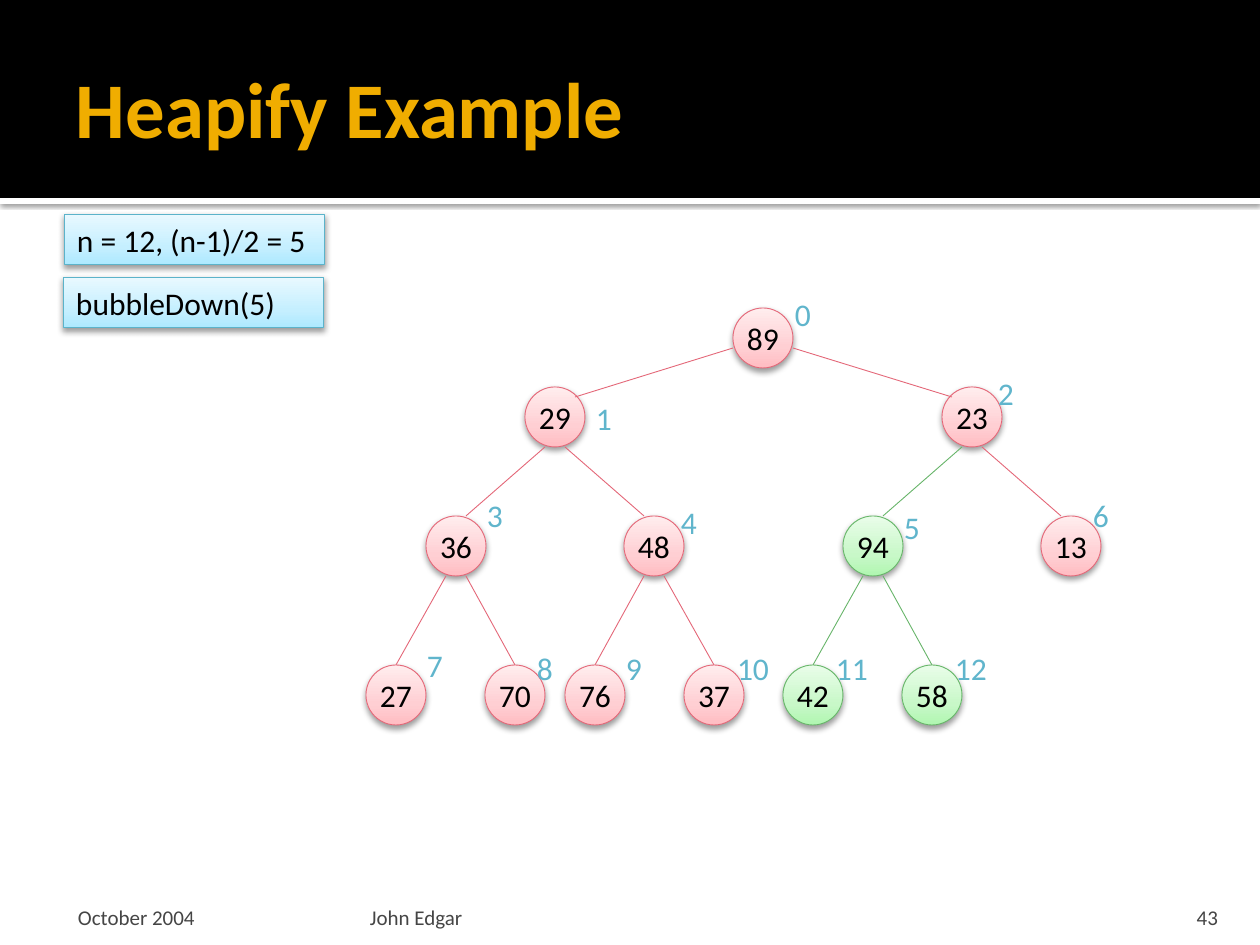
from dataclasses import dataclass
from typing import Optional

from lxml.etree import SubElement
from pptx import Presentation
from pptx.dml.color import RGBColor
from pptx.enum.shapes import MSO_CONNECTOR, MSO_SHAPE
from pptx.enum.text import MSO_ANCHOR as Anchor, PP_ALIGN as Align
from pptx.oxml.ns import qn
from pptx.util import Emu, Pt

FONT = "Calibri"
PX_PER_INCH = 126
BLACK = RGBColor(0x00, 0x00, 0x00)
WHITE = RGBColor(0xFF, 0xFF, 0xFF)
GOLD = RGBColor(0xF0, 0xAD, 0x00)
GREY = RGBColor(0x45, 0x45, 0x45)
TEAL = RGBColor(0x60, 0xB5, 0xCC)

RADIUS = 30
LABEL_H = 50
LEVEL_Y = (338, 417, 546, 695)


@dataclass(frozen=True)
class Style:
    line: RGBColor
    dark: RGBColor
    mid: RGBColor
    light: RGBColor


@dataclass(frozen=True)
class Shadow:
    alpha: int
    blur: float
    dist: float


@dataclass(frozen=True)
class Node:
    value: int
    x: int
    label_dx: int
    label_dy: int
    label_w: int = 60
    active: bool = False


@dataclass(frozen=True)
class Joint:
    """Offsets of an edge's ends from the parent's and child's centres."""
    parent_dx: int
    parent_dy: int
    child_dx: int
    child_dy: int


@dataclass(frozen=True)
class Caption:
    text: str
    box: tuple[int, int, int, int]
    size: int
    color: RGBColor
    bold: bool = False
    align: Align = Align.LEFT
    anchor: Anchor = Anchor.BOTTOM
    insets: tuple[int, int, int, int] = (13, 6, 13, 0)


PINK = Style(RGBColor(0xE4, 0x67, 0x78), RGBColor(0xFF, 0xBC, 0xC2),
             RGBColor(0xFF, 0xCF, 0xD3), RGBColor(0xFF, 0xED, 0xEE))
GREEN = Style(RGBColor(0x67, 0xB5, 0x69), RGBColor(0xB0, 0xF6, 0xB1),
              RGBColor(0xC8, 0xF8, 0xC8), RGBColor(0xE9, 0xFD, 0xE9))
BLUE = Style(RGBColor(0x5B, 0xB3, 0xCA), RGBColor(0xAD, 0xE9, 0xFF),
             RGBColor(0xC5, 0xEF, 0xFF), RGBColor(0xE9, 0xF9, 0xFF))
SOFT = Shadow(38, 3.5, 2)
BAND = Shadow(60, 2.5, 0.8)

# Heap in array order: the children of i are 2i + 1 and 2i + 2
HEAP = (
    Node(89, 763, 40, -24, 40),
    Node(29, 555, 49, 1), Node(23, 972, 34, -24, 50),
    Node(36, 456, 39, -31), Node(48, 654, 35, -24, 50),
    Node(94, 873, 39, -19, active=True), Node(13, 1071, 30, -31),
    Node(27, 396, 39, -30), Node(70, 515, 30, -27),
    Node(76, 595, 39, -27), Node(37, 714, 39, -27),
    Node(42, 813, 39, -27, active=True), Node(58, 932, 39, -27, active=True),
)
JOINTS = {1: Joint(30, 10, 20, -20), 2: Joint(10, 30, 10, -30), 3: Joint(10, 30, 0, -30)}

CAPTIONS = (
    Caption("Heapify Example", (63, 21, 1134, 173), 45, GOLD, True,
            anchor=Anchor.MIDDLE, insets=(13, 6, 6, 6)),
    Caption("October 2004", (63, 892, 294, 38), 12, GREY, insets=(15, 6, 6, 0)),
    Caption("John Edgar", (364, 892, 759, 38), 12, GREY, insets=(6, 6, 6, 0)),
    Caption("43", (1130, 892, 101, 38), 12, GREY, align=Align.RIGHT),
)
STEPS = (("n = 12, (n-1)/2 = 5", 64, 214), ("bubbleDown(5)", 63, 277))


def px(n: int) -> Emu:
    return Emu(round(n * 914400 / PX_PER_INCH))


def depth(i: int) -> int:
    return (i + 1).bit_length() - 1


def write(s, text: str, size: int, color: RGBColor, bold: bool = False,
          align: Align = Align.LEFT, anchor: Anchor = Anchor.MIDDLE,
          insets: tuple[int, int, int, int] = (13, 6, 13, 6)) -> None:
    tf = s.text_frame
    tf.word_wrap = True
    tf.vertical_anchor = anchor
    tf.margin_left, tf.margin_top, tf.margin_right, tf.margin_bottom = map(px, insets)
    p = tf.paragraphs[0]
    p.alignment = align
    r = p.add_run()
    r.text = text
    r.font.name, r.font.size, r.font.bold = FONT, Pt(size), bold
    r.font.color.rgb = color


def add_color(parent, color: RGBColor):
    return SubElement(parent, qn("a:srgbClr"), val=str(color))


def set_shadow(s, shadow: Shadow) -> None:
    effects = s._element.spPr.find(qn("a:effectLst"))
    outer = SubElement(effects, qn("a:outerShdw"), blurRad=str(Pt(shadow.blur)),
                       dist=str(Pt(shadow.dist)), dir="5400000", rotWithShape="0")
    SubElement(add_color(outer, BLACK), qn("a:alpha"), val=str(shadow.alpha * 1000))


def add_block(slide, kind: MSO_SHAPE, box: tuple[int, int, int, int],
              fill: RGBColor | Style, shadow: Optional[Shadow] = None):
    s = slide.shapes.add_shape(kind, *map(px, box))
    s.shadow.inherit = False
    if shadow:
        set_shadow(s, shadow)
    if not isinstance(fill, Style):
        s.fill.solid()
        s.fill.fore_color.rgb = fill
        s.line.fill.background()
        return s
    s.fill.gradient()
    s.fill.gradient_angle = 90
    stops = s._element.spPr.find(qn("a:gradFill")).find(qn("a:gsLst"))
    stops.clear()
    for pos, color in ((0, fill.dark), (35, fill.mid), (100, fill.light)):
        add_color(SubElement(stops, qn("a:gs"), pos=str(pos * 1000)), color)
    s.line.color.rgb = fill.line
    s.line.width = Pt(0.5)
    return s


def add_caption(slide, c: Caption) -> None:
    sp = slide.shapes.add_textbox(*map(px, c.box))
    write(sp, c.text, c.size, c.color, c.bold, c.align, c.anchor, c.insets)


def add_node(slide, i: int, node: Node):
    box = (node.x - RADIUS, LEVEL_Y[depth(i)] - RADIUS, 2 * RADIUS, 2 * RADIUS)
    s = add_block(slide, MSO_SHAPE.OVAL, box, GREEN if node.active else PINK, SOFT)
    write(s, str(node.value), 18, BLACK, align=Align.CENTER, insets=(0, 0, 0, 0))
    return s


def add_edge(slide, i: int, circle) -> None:
    parent, child, level = HEAP[(i - 1) // 2], HEAP[i], depth(i)
    j, side = JOINTS[level], -1 if i % 2 else 1
    ends = (parent.x + side * j.parent_dx, LEVEL_Y[level - 1] + j.parent_dy,
            child.x - side * j.child_dx, LEVEL_Y[level] + j.child_dy)
    line = slide.shapes.add_connector(MSO_CONNECTOR.STRAIGHT, *map(px, ends))
    if j.child_dx == 0:
        line.end_connect(circle, 0)
    line.line.color.rgb = (GREEN if child.active else PINK).line
    line.line.width = Pt(0.5)
    SubElement(line._element.spPr, qn("a:effectLst"))


def add_index(slide, i: int, node: Node) -> None:
    box = (node.x + node.label_dx - node.label_w // 2,
           LEVEL_Y[depth(i)] + node.label_dy - LABEL_H // 2, node.label_w, LABEL_H)
    add_caption(slide, Caption(str(i), box, 18, TEAL, align=Align.CENTER,
                               anchor=Anchor.TOP, insets=(6, 6, 6, 6)))


def main() -> None:
    prs = Presentation()
    prs.slide_width, prs.slide_height = px(1260), px(945)
    slide = prs.slides.add_slide(prs.slide_layouts[6])

    # Header band, title and footer
    add_block(slide, MSO_SHAPE.RECTANGLE, (0, 198, 1260, 6), WHITE, BAND)
    add_block(slide, MSO_SHAPE.RECTANGLE, (0, 0, 1260, 198), BLACK)
    for caption in CAPTIONS:
        add_caption(slide, caption)

    # Heap tree: circles, edges, array indexes
    circles = [add_node(slide, i, node) for i, node in enumerate(HEAP)]
    for i in range(1, len(HEAP)):
        add_edge(slide, i, circles[i])
    for i, node in enumerate(HEAP):
        add_index(slide, i, node)

    # Current step
    for text, x, y in STEPS:
        s = add_block(slide, MSO_SHAPE.RECTANGLE, (x, y, 261, 51), BLUE, SOFT)
        write(s, text, 18, BLACK)

    prs.save("out.pptx")


if __name__ == "__main__":
    main()
